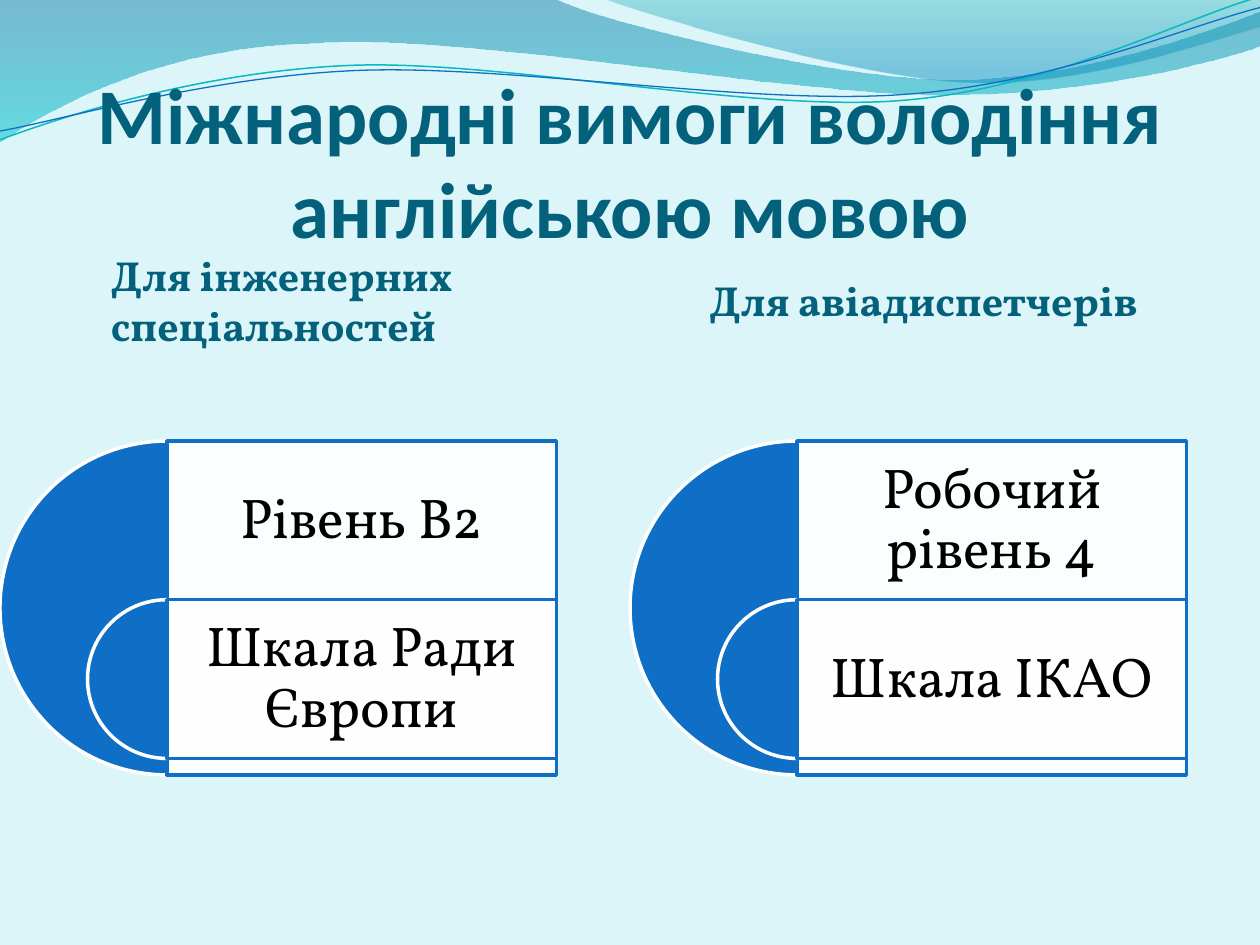
from lxml import etree
from pptx import Presentation
from pptx.dml.color import RGBColor
from pptx.enum import shapes, text
from pptx.oxml.ns import qn
from pptx.util import Pt

PX = 9144  # 100 px to the inch
COLORS = {
    "background": "DBF5F9", "heading": "04617B", "blue": "0F6FC6", "teal": "0AB8BF",
    "white": "FFFFFF", "black": "000000",
    "wave_top": "0074A1", "wave_bottom": "00C6CF",
    "crest_top": "00A1A9", "crest_bottom": "008BBF",
}
RGB = {name: RGBColor.from_string(value) for name, value in COLORS.items()}


def write(frame, content, size, font="Vollkorn", color="heading", bold=False,
          align=text.PP_ALIGN.LEFT, anchor=text.MSO_ANCHOR.MIDDLE,
          margins=(5, 0, 5, 0), before=0, after=0, spacing=1.0):
    frame.word_wrap = True
    frame.auto_size = text.MSO_AUTO_SIZE.NONE
    frame.vertical_anchor = anchor
    (frame.margin_left, frame.margin_top,
     frame.margin_right, frame.margin_bottom) = [m * PX for m in margins]
    paragraph = frame.paragraphs[0]
    paragraph.alignment = align
    paragraph.line_spacing = spacing
    paragraph.space_before, paragraph.space_after = Pt(before), Pt(after)
    run = paragraph.add_run()
    run.text = content
    run.font.size, run.font.name, run.font.bold = Pt(size), font, bold
    run.font.color.rgb = RGB[color]


def draw_curve(start, segments, closed=False):
    """Segments hold one point for a line, three for a cubic curve."""
    builder = slide.shapes.build_freeform(*start, scale=PX)
    builder.add_line_segments([p for segment in segments for p in segment], close=closed)
    curve = builder.convert_to_shape()
    curve.shadow.inherit = False
    lines = list(curve.element.iter(qn("a:lnTo")))
    for segment in segments:
        group, lines = lines[:len(segment)], lines[len(segment):]
        if len(group) == 3:
            bezier = etree.Element(qn("a:cubicBezTo"))
            group[0].addprevious(bezier)
            for line in group:
                bezier.append(line[0])
                line.getparent().remove(line)
    return curve


prs = Presentation()
prs.slide_width, prs.slide_height = 1000 * PX, 750 * PX
slide = prs.slides.add_slide(prs.slide_layouts[4])
slide.background.fill.solid()
slide.background.fill.fore_color.rgb = RGB["background"]

# Filled waves along the top: start, segments, stops (position, colour, opacity)
waves = [
    ((0, 0),
     [[(440, -1)],
      [(476, 17), (664, 63), (758, 63)], [(853, 63), (958, 26), (1000, 9)],
      [(1001, 36)],
      [(983, 44), (870, 76), (746, 75)], [(622, 75), (382, 28), (257, 34)],
      [(129, 36), (46, 83), (-1, 113)]],
     [(0, "wave_top", 45), (1, "wave_bottom", 55)]),
    ((479, -1),
     [[(509, 11), (682, 62), (769, 65)], [(856, 69), (961, 32), (1000, 21)],
      [(1000, 0)]],
     [(0, "crest_top", 30), (0.8, "crest_bottom", 45)]),
]
for start, segments, stops in waves:
    wave = draw_curve(start, segments, closed=True)
    wave.line.fill.background()
    wave.fill.gradient()
    wave.fill.gradient_angle = 270
    for stop, (position, color, _) in zip(wave.fill.gradient_stops, stops):
        stop.position = position
        stop.color.rgb = RGB[color]
    for tint, (_, _, opacity) in zip(wave.element.spPr.iter(qn("a:srgbClr")), stops):
        etree.SubElement(tint, qn("a:alpha"), val=str(opacity * 1000))

# Thin lines over the waves
strands = [
    ((0, 111), [[(48, 93), (158, 57), (277, 52)], [(395, 47), (593, 89), (713, 80)],
                [(833, 71), (938, 15), (998, -2)]], "teal", 0.85),
    ((0, 104), [[(47, 96), (164, 61), (283, 56)], [(403, 51), (597, 84), (717, 75)],
                [(836, 67), (941, 21), (1000, 6)]], "blue", 0.75),
]
for start, segments, color, width in strands:
    strand = draw_curve(start, segments)
    strand.fill.background()
    strand.line.color.rgb = RGB[color]
    strand.line.width = Pt(width)

# Title and column headings, in front of the waves
holders = {holder.placeholder_format.idx: holder for holder in slide.placeholders}
headings = [
    (0, (50, 77, 900, 125), "Міжнародні вимоги володіння англійською мовою",
     dict(size=45, font="Calibri", align=text.PP_ALIGN.CENTER,
          anchor=text.MSO_ANCHOR.BOTTOM, margins=(0, 5, 0, 0))),
    (1, (83, 202, 442, 72), "Для інженерних спеціальностей", dict(size=24, before=5)),
    (3, (558, 202, 442, 72), "Для авіадиспетчерів", dict(size=24, before=5)),
]
for idx, box, content, style in headings:
    heading = holders.pop(idx)
    heading.left, heading.top, heading.width, heading.height = [v * PX for v in box]
    write(heading.text_frame, content, bold=True, **style)
    heading.element.getparent().append(heading.element)
for unused in holders.values():
    unused.element.getparent().remove(unused.element)

# Nested half circles with their level and scale
TOP, ROW, OUTER, PANEL_W = 350, 126, 265, 309
columns = [(0, ("Рівень В2", "Шкала Ради Європи")),
           (500, ("Робочий рівень 4", "Шкала ІКАО"))]
for left, labels in columns:
    axis = left * PX + OUTER * PX // 2
    for row, (label, diameter) in enumerate(zip(labels, (OUTER, ROW))):
        top, size = (TOP + row * ROW) * PX, diameter * PX
        pie = slide.shapes.add_shape(
            shapes.MSO_SHAPE.PIE, axis - size // 2, top, size, size)
        pie.adjustments[0], pie.adjustments[1] = 54, 162  # 90 to 270 degrees
        panel = slide.shapes.add_shape(
            shapes.MSO_SHAPE.RECTANGLE, axis, top, PANEL_W * PX, size)
        for part, fill, line in ((pie, "blue", "white"), (panel, "white", "blue")):
            part.shadow.inherit = False
            part.fill.solid()
            part.fill.fore_color.rgb = RGB[fill]
            part.line.color.rgb = RGB[line]
            part.line.width = Pt(2)
        tint = panel.element.spPr.find(qn("a:solidFill")).find(qn("a:srgbClr"))
        etree.SubElement(tint, qn("a:alpha"), val="90000")
        caption = slide.shapes.add_textbox(axis, top, PANEL_W * PX, ROW * PX)
        write(caption.text_frame, label, size=32, color="black",
              align=text.PP_ALIGN.CENTER, margins=(13, 13, 13, 13),
              after=11, spacing=0.9)

prs.save("out.pptx")
